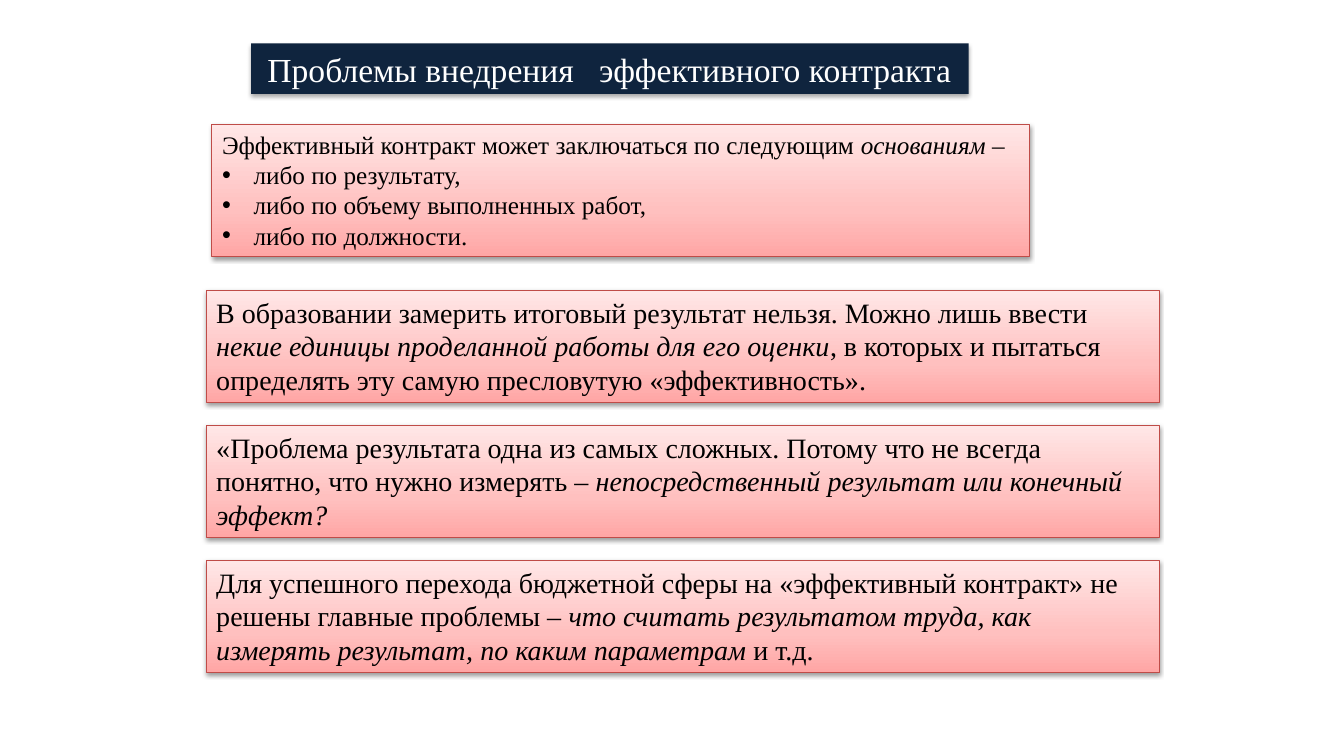
from copy import deepcopy

from pptx import Presentation
from pptx.dml.color import RGBColor
from pptx.enum.text import MSO_ANCHOR, MSO_AUTO_SIZE, PP_ALIGN
from pptx.oxml import parse_xml
from pptx.oxml.ns import nsdecls
from pptx.util import Pt

NAVY = RGBColor(0x0F, 0x24, 0x3E)
WHITE = RGBColor(0xFF, 0xFF, 0xFF)
BLACK = RGBColor(0x00, 0x00, 0x00)
RED = RGBColor(0xBF, 0x4C, 0x48)
PINKS = [
    (0, RGBColor(0xFF, 0xA6, 0xA5)),
    (0.35, RGBColor(0xFF, 0xC0, 0xBF)),
    (1, RGBColor(0xFF, 0xE7, 0xE7)),
]
FONT = "Times New Roman"

GROUNDS = [
    [("Эффективный контракт может заключаться по следующим ", False),
     ("основаниям", True), (" –", False)],
    [("либо по результату,", False)],
    [("либо по объему выполненных работ,", False)],
    [("либо по должности.", False)],
]
ISSUES = [
    [("В образовании замерить итоговый результат нельзя. Можно лишь ввести ", False),
     ("некие единицы проделанной работы для его оценки", True),
     (", в которых и пытаться определять эту самую пресловутую «эффективность».", False)],
    [("«Проблема результата одна из самых сложных. Потому что не всегда понятно, "
      "что нужно измерять – ", False),
     ("непосредственный результат или конечный эффект?", True)],
    [("Для успешного перехода бюджетной сферы на «эффективный контракт» не решены "
      "главные проблемы – ", False),
     ("что считать результатом труда, как измерять результат, по каким параметрам ", True),
     ("и т.д.", False)],
]


def place(shape, left, top, width, height):
    shape.left, shape.top = Pt(left), Pt(top)
    shape.width, shape.height = Pt(width), Pt(height)


def add_run(para, text, size=20, color=BLACK, italic=False):
    run = para.add_run()
    run.text = text
    font = run.font
    font.name, font.size, font.italic = FONT, Pt(size), italic
    font.color.rgb = color


def set_frame(shape, wrap=True):
    frame = shape.text_frame
    frame.word_wrap = wrap
    frame.auto_size = MSO_AUTO_SIZE.NONE
    frame.vertical_anchor = MSO_ANCHOR.TOP
    return frame


def set_bullet(para, mark):
    props = para._p.get_or_add_pPr()
    indent = Pt(22.5) if mark else 0
    props.set("marL", str(indent))
    props.set("indent", str(-indent))
    if mark:
        props.append(parse_xml(f'<a:buFont {nsdecls("a")} typeface="Arial"/>'))
        props.append(parse_xml(f'<a:buChar {nsdecls("a")} char="{mark}"/>'))
    else:
        props.append(parse_xml(f'<a:buNone {nsdecls("a")}/>'))


def add_shadow(shape, dist, alpha):
    shape._element.spPr.append(parse_xml(
        f'<a:effectLst {nsdecls("a")}><a:outerShdw blurRad="{Pt(3.1)}" '
        f'dist="{Pt(dist)}" dir="5400000" rotWithShape="0">'
        f'<a:srgbClr val="{BLACK}"><a:alpha val="{alpha * 1000}"/></a:srgbClr>'
        '</a:outerShdw></a:effectLst>'))


def set_pink(shape):
    fill = shape.fill
    fill.gradient()
    fill.gradient_angle = 90
    stops = shape._element.spPr.find(".//{*}gsLst")
    stops.append(deepcopy(stops[0]))
    for stop, (pos, color) in zip(fill.gradient_stops, PINKS):
        stop.position = pos
        stop.color.rgb = color
    shape.line.color.rgb = RED
    shape.line.width = Pt(0.75)
    add_shadow(shape, 1.6, 38)


def fill_title(shape):
    place(shape, 179.3, 31, 512.6, 36)
    shape.fill.solid()
    shape.fill.fore_color.rgb = NAVY
    add_shadow(shape, 1.8, 35)
    para = set_frame(shape, wrap=False).paragraphs[0]
    para.alignment = PP_ALIGN.LEFT
    add_run(para, " ", size=18, color=WHITE)
    add_run(para, "Проблемы внедрения   эффективного контракта", size=24, color=WHITE)


def fill_list(shape):
    place(shape, 151.4, 88.7, 584, 94.5)
    set_pink(shape)
    frame = set_frame(shape)
    for row, parts in enumerate(GROUNDS):
        para = frame.add_paragraph() if row else frame.paragraphs[0]
        para.space_before = Pt(0)
        set_bullet(para, "•" if row else None)
        for text, italic in parts:
            add_run(para, text, size=18, italic=italic)


def add_issue(slide, top, parts):
    box = slide.shapes.add_textbox(Pt(147.4), Pt(top), Pt(680.6), Pt(80))
    set_pink(box)
    para = set_frame(box).paragraphs[0]
    for text, italic in parts:
        add_run(para, text, italic=italic)


def main():
    deck = Presentation()
    deck.slide_width, deck.slide_height = Pt(960), Pt(540)
    slide = deck.slides.add_slide(deck.slide_layouts[1])
    fill_title(slide.shapes.title)
    fill_list(slide.placeholders[1])
    for row, parts in enumerate(ISSUES):
        add_issue(slide, 207.4 + row * 96.4, parts)
    deck.save("out.pptx")


if __name__ == "__main__":
    main()
